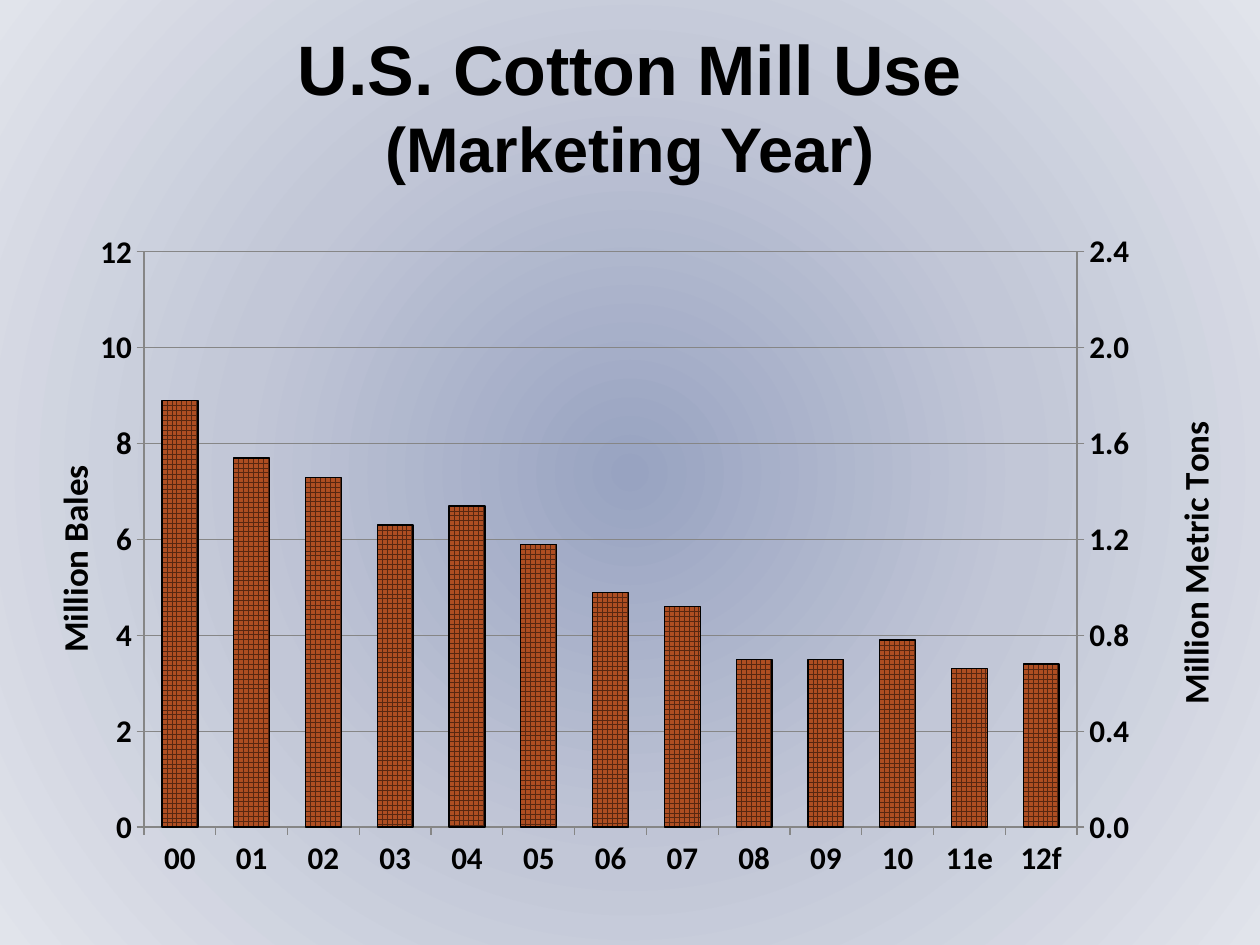
from copy import deepcopy

from pptx import Presentation
from pptx.chart.axis import CategoryAxis, ValueAxis
from pptx.chart.data import CategoryChartData
from pptx.dml.color import RGBColor
from pptx.enum.chart import XL_CHART_TYPE, XL_TICK_LABEL_POSITION, XL_TICK_MARK
from pptx.enum.dml import MSO_PATTERN
from pptx.enum.text import MSO_ANCHOR, PP_ALIGN
from pptx.oxml import parse_xml
from pptx.oxml.ns import nsdecls, qn
from pptx.util import Emu, Pt

STACKED = XL_CHART_TYPE.COLUMN_STACKED
LOW = XL_TICK_LABEL_POSITION.LOW
OUTSIDE, NO_TICK = XL_TICK_MARK.OUTSIDE, XL_TICK_MARK.NONE
LARGE_GRID = MSO_PATTERN.LARGE_GRID
MIDDLE, CENTER = MSO_ANCHOR.MIDDLE, PP_ALIGN.CENTER

BLACK = RGBColor(0x00, 0x00, 0x00)
GRAY = RGBColor(0x86, 0x86, 0x86)
RUST = RGBColor(0xAE, 0x4E, 0x22)
BROWN = RGBColor(0x57, 0x27, 0x11)
BACKDROP = [(0, RGBColor(0x98, 0xA3, 0xC1)), (50, RGBColor(0xC2, 0xC7, 0xD7)),
            (100, RGBColor(0xE1, 0xE4, 0xEB))]

PX_PER_INCH = 126
YEARS = ["00", "01", "02", "03", "04", "05", "06", "07", "08", "09", "10", "11e", "12f"]
BALES = [8.9, 7.7, 7.3, 6.3, 6.7, 5.9, 4.9, 4.6, 3.5, 3.5, 3.9, 3.3, 3.4]
TONS = [1.93, 1.68, 1.58, 1.37, 1.46, 1.28, 1.08, 1, 0.77, 0.77, 0.85, 0.72, 0.74]


def px(length):
    """Turn whole pixels into EMU."""
    return Emu(round(length * 914400 / PX_PER_INCH))


def write(para, text, *, size, font, color=BLACK, bold=True, align=CENTER):
    """Add one formatted span of text to a paragraph."""
    para.alignment = align
    span = para.add_run()
    span.text = text
    span.font.size, span.font.name = Pt(size), font
    span.font.bold, span.font.color.rgb = bold, color


def paint_background(page):
    """Fill the page with a gradient that spreads from its centre."""
    page.background.fill.gradient()
    gradient = page.element.find(".//" + qn("a:gradFill"))
    stops = "".join(f'<a:gs pos="{spot * 1000}"><a:srgbClr val="{color}"/></a:gs>'
                    for spot, color in BACKDROP)
    gradient.getparent().replace(gradient, parse_xml(
        f'<a:gradFill {nsdecls("a")} rotWithShape="1"><a:gsLst>{stops}</a:gsLst>'
        '<a:path path="circle"><a:fillToRect l="50000" t="50000" r="50000" b="50000"/>'
        '</a:path></a:gradFill>'))


def add_heading(page, left, top, width, height):
    """Place the two-line heading in its box."""
    box = page.shapes.add_textbox(px(left), px(top), px(width), px(height))
    frame = box.text_frame
    frame.word_wrap, frame.vertical_anchor = True, MIDDLE
    write(frame.paragraphs[0], "U.S. Cotton Mill Use", size=40, font="Arial")
    write(frame.add_paragraph(), "(Marketing Year)", size=36, font="Arial")


def set_layout(parent, index, **values):
    """Give a chart part a manual layout in fractions of the chart."""
    for old in parent.findall(qn("c:layout")):
        parent.remove(old)
    target = '<c:layoutTarget val="inner"/>' if "w" in values else ""
    modes = '<c:xMode val="edge"/><c:yMode val="edge"/>'
    sizes = "".join(f'<c:{name} val="{value}"/>' for name, value in values.items())
    parent.insert(index, parse_xml(
        f'<c:layout {nsdecls("c")}><c:manualLayout>{target}{modes}{sizes}'
        '</c:manualLayout></c:layout>'))


def add_right_axis(plot_area):
    """Move the second series to its own plot and return its value axis element."""
    bars, category, value = (plot_area.find(qn(tag))
                             for tag in ("c:barChart", "c:catAx", "c:valAx"))
    right_bars, right_category, right_value = map(deepcopy, (bars, category, value))
    bars.remove(bars.findall(qn("c:ser"))[1])
    right_bars.remove(right_bars.find(qn("c:ser")))
    bars.addnext(right_bars)
    value.addnext(right_value)
    right_value.addnext(right_category)
    ids = {category.find(qn("c:axId")).get("val"): "50010",
           value.find(qn("c:axId")).get("val"): "50020"}
    for part in (right_bars, right_category, right_value):
        for tag in ("c:axId", "c:crossAx"):
            for link in part.findall(qn(tag)):
                link.set("val", ids[link.get("val")])
    right_value.find(qn("c:axPos")).set("val", "r")
    right_value.find(qn("c:crosses")).set("val", "max")
    CategoryAxis(right_category).visible = False
    return right_value


def style_ticks(axis):
    """Give an axis its gray line and outer tick marks."""
    axis.format.line.color.rgb = GRAY
    axis.format.line.width = Pt(0.75)
    axis.major_tick_mark, axis.minor_tick_mark = OUTSIDE, NO_TICK


def style_value_axis(element, title, *, top, step, number_format, grid, x, y):
    """Set the scale, number format and rotated title of a value axis."""
    axis = ValueAxis(element)
    style_ticks(axis)
    axis.minimum_scale, axis.maximum_scale, axis.major_unit = 0, top, step
    axis.tick_labels.number_format = number_format
    axis.tick_labels.number_format_is_linked = False
    axis.has_major_gridlines = grid
    if grid:
        axis.major_gridlines.format.line.color.rgb = GRAY
        axis.major_gridlines.format.line.width = Pt(0.75)
    write(axis.axis_title.text_frame.paragraphs[0], title, size=20, font="Calibri")
    heading = element.find(qn("c:title"))
    body = heading.find(".//" + qn("a:bodyPr"))
    body.set("rot", "-5400000")
    body.set("vert", "horz")
    set_layout(heading, 1, x=x, y=y)


def add_mill_use_chart(page, left, top, width, height):
    """Place the column chart with bales on the left and tons on the right."""
    data = CategoryChartData()
    data.categories = YEARS
    data.add_series("Series 1", BALES)
    data.add_series("Series 2", TONS)
    chart = page.shapes.add_chart(STACKED, px(left), px(top), px(width), px(height), data).chart
    chart.has_title = chart.has_legend = False
    chart.font.name, chart.font.size = "Calibri", Pt(18)
    chart.font.bold, chart.font.color.rgb = True, BLACK

    plot_area = chart.element.find(".//" + qn("c:plotArea"))
    right = add_right_axis(plot_area)
    set_layout(plot_area, 0, x=0.095, y=0.139, w=0.791, h=0.762)
    style_ticks(chart.category_axis)
    chart.category_axis.tick_label_position = LOW
    style_value_axis(plot_area.find(qn("c:valAx")), "Million Bales", top=12, step=2,
                     number_format="0", grid=True, x=0.01, y=0.41)
    style_value_axis(right, "Million Metric Tons", top=2.4, step=0.4,
                     number_format="#,##0.0", grid=False, x=0.96, y=0.35)

    for plot in chart.plots:
        plot.gap_width, plot.overlap, plot.vary_by_categories = 100, 100, False
    bales, tons = (plot.series[0].format for plot in chart.plots)
    bales.fill.patterned()
    bales.fill.pattern = LARGE_GRID
    bales.fill.fore_color.rgb, bales.fill.back_color.rgb = BROWN, RUST
    bales.line.color.rgb, bales.line.width = BLACK, Pt(0.75)
    tons.fill.background()
    tons.line.fill.background()


def main():
    """Build and save the deck."""
    deck = Presentation()
    deck.slide_width, deck.slide_height = px(1260), px(945)
    page = deck.slides.add_slide(deck.slide_layouts[6])
    paint_background(page)
    add_heading(page, 32, 42, 1196, 126)
    add_mill_use_chart(page, 32, 147, 1196, 755)
    deck.save("out.pptx")


if __name__ == "__main__":
    main()
